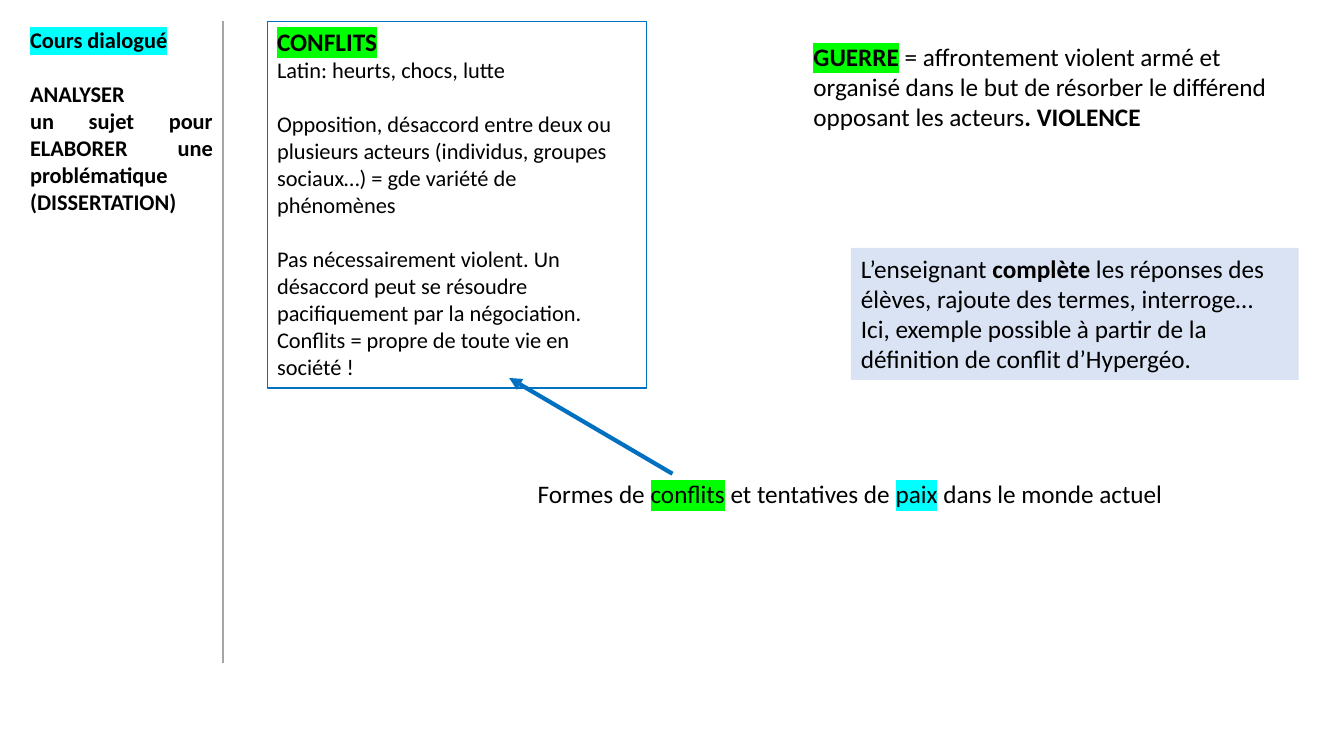
from dataclasses import dataclass
from typing import Optional

from lxml.etree import SubElement
from pptx import Presentation
from pptx.dml.color import RGBColor
from pptx.enum.shapes import MSO_CONNECTOR, MSO_SHAPE
from pptx.enum.text import MSO_ANCHOR, MSO_AUTO_SIZE, PP_ALIGN
from pptx.oxml.ns import qn
from pptx.util import Emu, Pt

PX = 9144
FONT = "Calibri"
BLANK_LINE = 19.5
COLORS = {
    "text": "000000",
    "green": "00FF00",
    "cyan": "00FFFF",
    "blue": "0070C0",
    "gray": "A5A5A5",
    "pale": "DAE3F3",
}


@dataclass(frozen=True)
class Span:
    text: str
    bold: bool = False
    highlight: Optional[str] = None


@dataclass(frozen=True)
class Para:
    spans: tuple[Span, ...]
    size: int = 18
    before: float = 0


@dataclass(frozen=True)
class Box:
    left: int
    top: int
    width: int
    height: int
    paras: tuple[Para, ...]
    align: PP_ALIGN = PP_ALIGN.LEFT
    fill: Optional[str] = None
    line: Optional[str] = None


@dataclass(frozen=True)
class Line:
    x1: int
    y1: int
    x2: int
    y2: int
    color: str
    width: float
    arrow: bool = False


BOXES = (
    Box(20, 21, 201, 199, (
        Para((Span("Cours dialogué", True, "cyan"),), 16),
        Para((Span("ANALYSER", True),), 16, BLANK_LINE),
        Para((Span("un sujet pour ELABORER une problématique", True),), 16),
        Para((Span("(DISSERTATION)", True),), 16),
    ), PP_ALIGN.JUSTIFY),
    Box(453, 470, 780, 40, (
        Para((
            Span("Formes de "),
            Span("conflits", highlight="green"),
            Span(" et tentatives de "),
            Span("paix", highlight="cyan"),
            Span(" dans le monde actuel"),
        )),
    ), PP_ALIGN.CENTER),
    Box(265, 21, 376, 364, (
        Para((Span("CONFLITS", True, "green"),)),
        Para((Span("Latin: heurts, chocs, lutte"),), 16),
        Para((Span("Opposition, désaccord entre deux ou plusieurs acteurs (individus, "
                   "groupes sociaux…) = gde variété de phénomènes"),), 16, BLANK_LINE),
        Para((Span("Pas nécessairement violent. Un désaccord peut se résoudre "
                   "pacifiquement par la négociation. Conflits = propre de toute "
                   "vie en société !"),), 16, BLANK_LINE),
    ), line="blue"),
    Box(797, 36, 476, 131, (
        Para((
            Span("GUERRE", True, "green"),
            Span(" = affrontement violent armé et organisé dans le but de résorber "
                 "le différend opposant les acteurs"),
            Span(". VIOLENCE", True),
        )),
    )),
    Box(844, 246, 444, 131, (
        Para((
            Span("L’enseignant "),
            Span("complète", True),
            Span(" les réponses des élèves, rajoute des termes, interroge…"),
        )),
        Para((Span("Ici, exemple possible à partir de la définition de conflit "
                   "d’Hypergéo."),)),
    ), fill="pale"),
)

LINES = (
    Line(221, 21, 221, 658, "gray", 1),
    Line(667, 470, 505, 375, "blue", 3, arrow=True),
)


def px(value: int) -> Emu:
    return Emu(value * PX)


def rgb(name: str) -> RGBColor:
    return RGBColor.from_string(COLORS[name])


def add_para(p, para: Para, align: PP_ALIGN) -> None:
    p.alignment = align
    if para.before:
        p.space_before = Pt(para.before)
    p.font.name = FONT
    p.font.size = Pt(para.size)
    p.font.color.rgb = rgb("text")
    weights = {span.bold for span in para.spans}
    if len(weights) == 1:
        p.font.bold = para.spans[0].bold
    for span in para.spans:
        r = p.add_run()
        r.text = span.text
        if len(weights) > 1:
            r.font.bold = span.bold
        if span.highlight:
            mark = SubElement(r.font._element, qn("a:highlight"))
            SubElement(mark, qn("a:srgbClr"), val=COLORS[span.highlight])


def add_box(s, box: Box) -> None:
    place = [px(v) for v in (box.left, box.top, box.width, box.height)]
    if box.fill or box.line:
        sp = s.shapes.add_shape(MSO_SHAPE.RECTANGLE, *place)
        sp.shadow.inherit = False
        if box.fill:
            sp.fill.solid()
            sp.fill.fore_color.rgb = rgb(box.fill)
        else:
            sp.fill.background()
        if box.line:
            sp.line.color.rgb = rgb(box.line)
            sp.line.width = Pt(0.75)
        else:
            sp.line.fill.background()
    else:
        sp = s.shapes.add_textbox(*place)
    tf = sp.text_frame
    tf.word_wrap = True
    tf.auto_size = MSO_AUTO_SIZE.SHAPE_TO_FIT_TEXT
    tf.vertical_anchor = MSO_ANCHOR.TOP
    for i, para in enumerate(box.paras):
        add_para(tf.add_paragraph() if i else tf.paragraphs[0], para, box.align)


def add_line(s, line: Line) -> None:
    ends = [px(v) for v in (line.x1, line.y1, line.x2, line.y2)]
    cx = s.shapes.add_connector(MSO_CONNECTOR.STRAIGHT, *ends)
    cx.line.color.rgb = rgb(line.color)
    cx.line.width = Pt(line.width)
    if line.arrow:
        SubElement(cx.line._get_or_add_ln(), qn("a:tailEnd"), type="triangle")
    SubElement(cx._element.spPr, qn("a:effectLst"))


def main() -> None:
    prs = Presentation()
    prs.slide_width, prs.slide_height = px(1333), px(750)
    s = prs.slides.add_slide(prs.slide_layouts[6])
    for box in BOXES:
        add_box(s, box)
    for line in LINES:
        add_line(s, line)
    prs.save("out.pptx")


if __name__ == "__main__":
    main()
